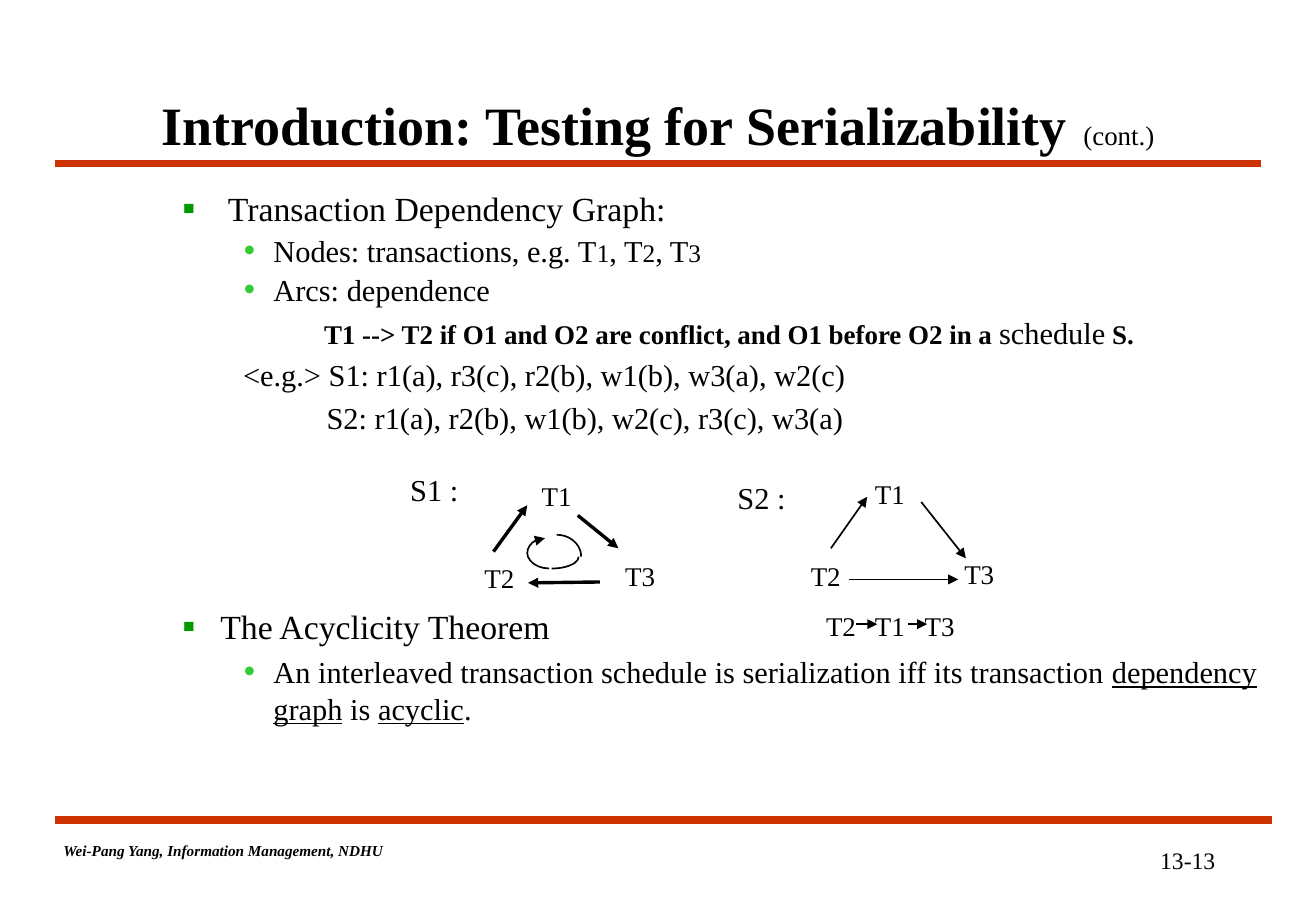
from pptx import Presentation
from pptx.dml.color import RGBColor
from pptx.enum.shapes import MSO_CONNECTOR, MSO_SHAPE
from pptx.enum.text import MSO_ANCHOR, PP_ALIGN
from pptx.oxml.ns import qn
from pptx.util import Pt
from lxml.etree import SubElement

FONT = "Times New Roman"
COLORS = {"ink": "000000", "rule": "CC3300", "square": "009900", "dot": "33CC33"}

TITLE = [("Introduction: Testing for Serializability", {"size": 32, "bold": True}),
         (" ", {"size": 36, "bold": True}), ("(cont.)", {"size": 16})]
FOOTER = "Wei-Pang Yang, Information Management, NDHU"
PAGE = "13-13"

SQUARE = {"left": 58.5, "indent": -22.5, "bullet": ("▪", "square", 110)}
DOT = {"left": 90, "indent": -18, "bullet": ("•", "dot", 120)}
BIG, MID, SMALL, SUB = {"size": 20}, {"size": 18}, {"size": 16}, {"size": 15}
STRONG, LINKED = {"size": 16, "bold": True}, {"size": 18, "underline": True}
BODY = [
    ([("Transaction Dependency Graph:", BIG)], {**SQUARE, "left": 63, "indent": -27, "before": 9.4}),
    ([("Nodes: transactions, e.g. T", MID), ("1", SUB), (", T", MID), ("2", SUB),
      (", T", MID), ("3", SUB)], {**DOT, "before": 1.8}),
    ([("Arcs: dependence", MID)], {**DOT, "before": 1.8}),
    ([("T1 --> T2 if O1 and O2 are conflict, and O1 before O2 in a ", STRONG),
      ("schedule", MID), (" S.", STRONG)], {"left": 120, "before": 3.7}),
    ([("<e.g.> S1: r1(a), r3(c), r2(b), w1(b), w3(a), w2(c)", MID)], {"left": 72, "before": 3.7}),
    ([("S2: r1(a), r2(b), w1(b), w2(c), r3(c), w3(a)", MID)], {"left": 121.5, "before": 3.7}),
    ([("The Acyclicity Theorem", BIG)], {**SQUARE, "before": 100.6}),
    ([("An interleaved transaction schedule is serialization iff its transaction ", MID),
      ("dependency graph", LINKED), (" is ", MID), ("acyclic", LINKED), (".", MID)],
     {**DOT, "before": 4.4}),
]

LABELS = [
    ("S1 :", 236, 276, MID), ("T1", 314, 281, SMALL), ("T2", 280, 329.5, SMALL),
    ("T3", 363.5, 328, SMALL),
    ("S2 :", 430, 280.5, MID), ("T1", 511.5, 279.5, SMALL), ("T2", 473.5, 328, SMALL),
    ("T3", 564.5, 327, SMALL),
    ("T2", 482.5, 357.5, SMALL), ("T1", 511.5, 357.5, SMALL), ("T3", 541, 357.5, SMALL),
]
RULES = [(32.5, 486, 754, 486), (32.5, 97, 747.5, 97)]
CYCLE_ARROWS = [(292.5, 327, 312.5, 299.5), (342.5, 305.5, 366.5, 325), (355.5, 345, 313, 345.5)]
CHAIN_ARROWS = [(492.5, 325, 514, 294.5), (546, 297.5, 572.5, 331), (503, 343.5, 568, 343.5),
                (507.5, 370, 520, 370), (538, 370, 549.5, 370)]
LOOP = [(330, 330, 14.5, 13), (327, 330, 16, 7), (325.5, 327.5, 13, 9.5), (323, 328, 10.5, 9)]


def rgb(name):
    return RGBColor.from_string(COLORS[name])


def add_run(p, text, size=18, bold=False, italic=False, underline=False):
    r = p.add_run()
    r.text = text
    f = r.font
    f.name, f.size, f.bold, f.italic, f.underline = FONT, Pt(size), bold, italic, underline
    f.color.rgb = rgb("ink")


def format_paragraph(p, left=0, indent=0, before=0, bullet=None):
    p.space_before = Pt(before)
    pPr = p._p.get_or_add_pPr()
    pPr.set("marL", str(Pt(left)))
    pPr.set("indent", str(Pt(indent)))
    if bullet:
        char, color, percent = bullet
        clr = SubElement(pPr, qn("a:buClr"))
        SubElement(clr, qn("a:srgbClr"), val=COLORS[color])
        SubElement(pPr, qn("a:buSzPct"), val=str(percent * 1000))
        SubElement(pPr, qn("a:buFont"), typeface=FONT)
        SubElement(pPr, qn("a:buChar"), char=char)


def add_text(s, paragraphs, x, y, w, h, align=PP_ALIGN.LEFT, anchor=MSO_ANCHOR.TOP):
    tf = s.shapes.add_textbox(Pt(x), Pt(y), Pt(w), Pt(h)).text_frame
    tf.word_wrap = True
    tf.vertical_anchor = anchor
    for i, (runs, layout) in enumerate(paragraphs):
        p = tf.paragraphs[0] if i == 0 else tf.add_paragraph()
        p.alignment = align
        format_paragraph(p, **layout)
        for text, style in runs:
            add_run(p, text, **style)


def style_line(shape, color, width, arrow):
    shape.line.color.rgb = rgb(color)
    shape.line.width = Pt(width)
    if arrow:
        SubElement(shape.line._get_or_add_ln(), qn("a:tailEnd"), type="triangle")


def add_line(s, ends, color="ink", width=1, arrow=True):
    line = s.shapes.add_connector(MSO_CONNECTOR.STRAIGHT, *[Pt(v) for v in ends])
    style_line(line, color, width, arrow)
    SubElement(line._element.spPr, qn("a:effectLst"))


def add_arc(s, cx, cy, rx, ry, start, arrow):
    arc = s.shapes.add_shape(MSO_SHAPE.ARC, Pt(cx - rx), Pt(cy - ry), Pt(2 * rx), Pt(2 * ry))
    arc.shadow.inherit = False
    arc.fill.background()
    arc.adjustments[0] = start * 0.6
    arc.adjustments[1] = (start + 90) % 360 * 0.6
    style_line(arc, "ink", 1, arrow)


def main():
    prs = Presentation()
    prs.slide_width, prs.slide_height = Pt(780), Pt(540)
    s = prs.slides.add_slide(prs.slide_layouts[6])
    for ends in RULES:
        add_line(s, ends, color="rule", width=4.5, arrow=False)
    add_text(s, [([(PAGE, {"size": 14})], {})], 674, 498, 60, 24.5, align=PP_ALIGN.CENTER)
    add_text(s, [([(FOOTER, {"size": 9, "bold": True, "italic": True})], {})], 30.5, 495, 232.5, 18)
    add_text(s, [(TITLE, {})], 42, 48, 696, 48, align=PP_ALIGN.CENTER, anchor=MSO_ANCHOR.MIDDLE)
    add_text(s, BODY, 65, 108, 697, 366)
    for text, x, y, style in LABELS:
        add_text(s, [([(text, style)], {})], x, y, 46, 28)
    for ends in CYCLE_ARROWS:
        add_line(s, ends, width=2)
    for ends in CHAIN_ARROWS:
        add_line(s, ends)
    for i, ellipse in enumerate(LOOP):
        add_arc(s, *ellipse, start=(270 + 90 * i) % 360, arrow=i == len(LOOP) - 1)
    prs.save("out.pptx")


if __name__ == "__main__":
    main()
